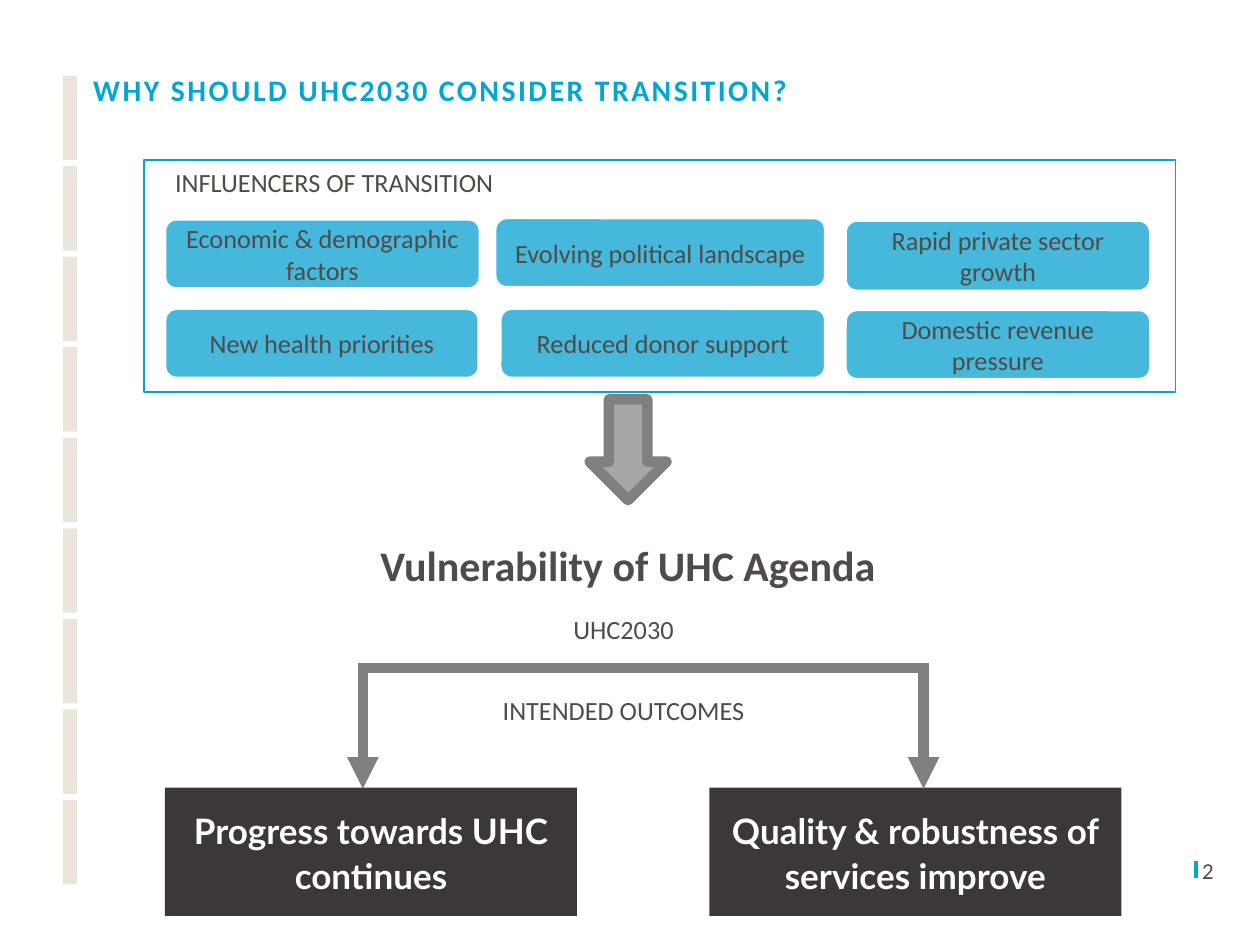
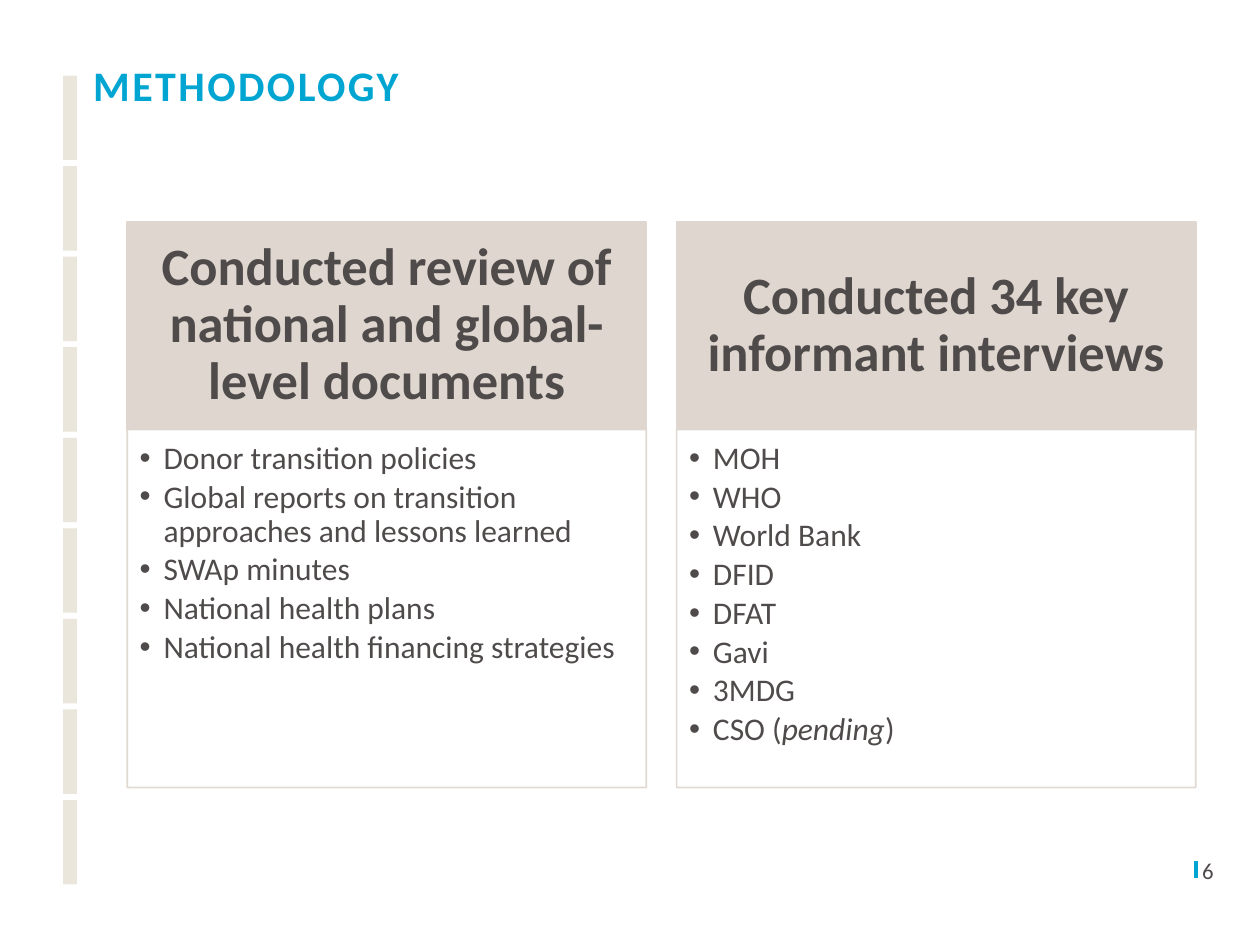
from lxml.etree import SubElement
from pptx import Presentation
from pptx.dml.color import RGBColor
from pptx.enum.shapes import MSO_CONNECTOR as Link, MSO_SHAPE as Shape
from pptx.enum.text import MSO_ANCHOR as Anchor, PP_ALIGN as Align
from pptx.oxml.ns import qn
from pptx.util import Inches, Pt

COLORS = {
    "accent": "00A5D2", "text": "504B4B", "bar": "EBE6DC", "white": "FFFFFF",
    "pill": "45B8DC", "outcome": "3C3838", "arrow": "808080",
    "arrow_fill": "A6A6A6", "card": "DED6CF",
}
BODY, STRONG = "Calibri", "Lato"

WHY = {"title": "WHY SHOULD UHC2030 CONSIDER TRANSITION?", "number": "2",
       "size": 17, "place": (0.67, 0.56, 8.63, 0.65)}
METHOD = {"title": "METHODOLOGY", "number": "6",
          "size": 24, "place": (0.67, 0.48, 8.63, 1.45)}

INFLUENCERS = [
    ("Economic & demographic factors", (1.31, 1.74, 2.5, 0.55)),
    ("Evolving political landscape", (3.93, 1.73, 2.62, 0.55)),
    ("Rapid private sector growth", (6.71, 1.75, 2.42, 0.56)),
    ("New health priorities", (1.31, 2.45, 2.49, 0.55)),
    ("Reduced donor support", (3.97, 2.45, 2.58, 0.55)),
    ("Domestic revenue pressure", (6.71, 2.46, 2.42, 0.55)),
]
LABELS = [
    ("INFLUENCERS OF TRANSITION", (1.39, 1.32, 5.13, 0.3), 15, False),
    ("Vulnerability of UHC Agenda", (3.02, 4.28, 4.04, 0.4), 24, True),
    ("UHC2030", (4.55, 4.87, 0.88, 0.25), 15, False),
    ("INTENDED OUTCOMES", (3.99, 5.51, 2.56, 0.3), 15, False),
]
OUTCOMES = [
    ("Progress towards UHC continues", 1.31, 2.88),
    ("Quality & robustness of services improve", 5.63, 7.33),
]
SOURCES = [
    ("Conducted review of national and global-level documents", [
        ["Donor transition policies"],
        ["Global reports on transition approaches and lessons learned"],
        ["SWAp minutes"],
        ["National health plans"],
        ["National health financing strategies"],
    ]),
    ("Conducted 34 key informant interviews", [
        ["MOH"], ["WHO"], ["World Bank"], ["DFID"], ["DFAT"], ["Gavi"],
        ["3MDG"], ["CSO (", "pending", ")"],
    ]),
]
ITALIC = {"pending"}


def rgb(name):
    return RGBColor.from_string(COLORS[name])


def inches(values):
    return [Inches(v) for v in values]


def fade(fill_parent, percent):
    color = fill_parent.find(qn("a:solidFill"))[0]
    SubElement(color, qn("a:alpha"), val=str(percent * 1000))


def add_box(slide, kind, place, fill, line=None, width=1):
    box = slide.shapes.add_shape(kind, *inches(place))
    box.shadow.inherit = False
    box.fill.solid()
    box.fill.fore_color.rgb = rgb(fill)
    if line:
        box.line.color.rgb = rgb(line)
        box.line.width = Pt(width)
    else:
        box.line.fill.background()
    return box


def add_line(slide, start, end, color, width, arrow=False):
    line = slide.shapes.add_connector(Link.STRAIGHT, *inches(start + end))
    line.line.color.rgb = rgb(color)
    line.line.width = Pt(width)
    if arrow:
        SubElement(line.line._get_or_add_ln(), qn("a:tailEnd"), type="triangle")
    SubElement(line._element.spPr, qn("a:effectLst"))


def add_run(paragraph, text, size, color="text", bold=False, font=BODY):
    run = paragraph.add_run()
    run.text = text
    run.font.name = font
    run.font.size = Pt(size)
    run.font.bold = bold
    run.font.color.rgb = rgb(color)
    return run


def set_frame(shape, insets=(0, 0, 0, 0), anchor=Anchor.TOP):
    frame = shape.text_frame
    frame.word_wrap = True
    frame.vertical_anchor = anchor
    (frame.margin_left, frame.margin_top,
     frame.margin_right, frame.margin_bottom) = inches(insets)
    return frame


def add_text(slide, place, **layout):
    return set_frame(slide.shapes.add_textbox(*inches(place)), **layout)


def center_text(frame, spacing, text, size, **style):
    paragraph = frame.paragraphs[0]
    paragraph.alignment = Align.CENTER
    paragraph.line_spacing = spacing
    add_run(paragraph, text, size, **style)


def add_page(deck, page):
    slide = deck.slides.add_slide(deck.slide_layouts[6])
    for i in range(9):
        add_box(slide, Shape.RECTANGLE, (0.5, 0.6 + i * 5.75 / 8, 0.11, 0.67), "bar")
    add_line(slide, (9.49, 6.83), (9.49, 6.97), "accent", 2.15)
    number = add_text(slide, (9.54, 6.74, 0.28, 0.28), anchor=Anchor.BOTTOM)
    add_run(number.paragraphs[0], page["number"], 13)
    title = add_text(slide, page["place"], insets=(0.07, 0.04, 0.07, 0.04)).paragraphs[0]
    title.line_spacing = 0.9
    run = add_run(title, page["title"], page["size"], "accent", True)
    run.font._element.set("spc", "140")
    return slide


def build_why(deck):
    slide = add_page(deck, WHY)
    add_box(slide, Shape.RECTANGLE, (1.14, 1.27, 8.19, 1.84), "white", "accent")
    for text, place in INFLUENCERS:
        pill = add_box(slide, Shape.ROUNDED_RECTANGLE, place, "pill", "white", 1.5)
        frame = set_frame(pill, (0.1, 0.05, 0.1, 0.05), Anchor.MIDDLE)
        center_text(frame, 1.0, text, 15)
    for text, place, size, bold in LABELS:
        add_run(add_text(slide, place).paragraphs[0], text, size, bold=bold)
    add_box(slide, Shape.DOWN_ARROW, (4.68, 3.17, 0.61, 0.8), "arrow_fill", "arrow", 6)
    add_line(slide, (2.87, 5.3), (7.34, 5.3), "arrow", 6)
    for text, left, arrow_x in OUTCOMES:
        outcome = add_box(slide, Shape.RECTANGLE, (left, 6.25, 3.27, 1.02), "outcome")
        frame = set_frame(outcome, (0.1, 0.02, 0.1, 0.02), Anchor.MIDDLE)
        center_text(frame, 1.07, text, 20, color="white", bold=True, font=STRONG)
        add_line(slide, (arrow_x, 5.26), (arrow_x, 6.26), "arrow", 6, True)


def add_bullet(paragraph, parts):
    props = paragraph._p.get_or_add_pPr()
    props.set("marL", str(Inches(0.19)))
    props.set("indent", str(-Inches(0.19)))
    SubElement(props, qn("a:buFont"), typeface="Arial")
    SubElement(props, qn("a:buChar"), char="•")
    paragraph.line_spacing = 0.9
    paragraph.space_after = Pt(2.7)
    for part in parts:
        add_run(paragraph, part, 18).font.italic = part in ITALIC


def build_method(deck):
    slide = add_page(deck, METHOD)
    for column, (heading, items) in enumerate(SOURCES):
        left = 1.01 + column * 4.36
        head = add_box(slide, Shape.RECTANGLE, (left, 1.76, 4.12, 1.65), "card", "card")
        frame = set_frame(head, (0.23, 0.13, 0.23, 0.13), Anchor.MIDDLE)
        center_text(frame, 0.9, heading, 30, bold=True)
        body = add_box(slide, Shape.RECTANGLE, (left, 3.41, 4.12, 2.84), "white", "card")
        fade(body._element.spPr, 90)
        fade(body.line._get_or_add_ln(), 90)
        frame = set_frame(body, (0.1, 0.1, 0.14, 0.16))
        for i, parts in enumerate(items):
            paragraph = frame.add_paragraph() if i else frame.paragraphs[0]
            paragraph.alignment = Align.LEFT
            add_bullet(paragraph, parts)


def main():
    deck = Presentation()
    deck.slide_width, deck.slide_height = Inches(10), Inches(7.5)
    build_why(deck)
    build_method(deck)
    deck.save("out.pptx")


if __name__ == "__main__":
    main()
